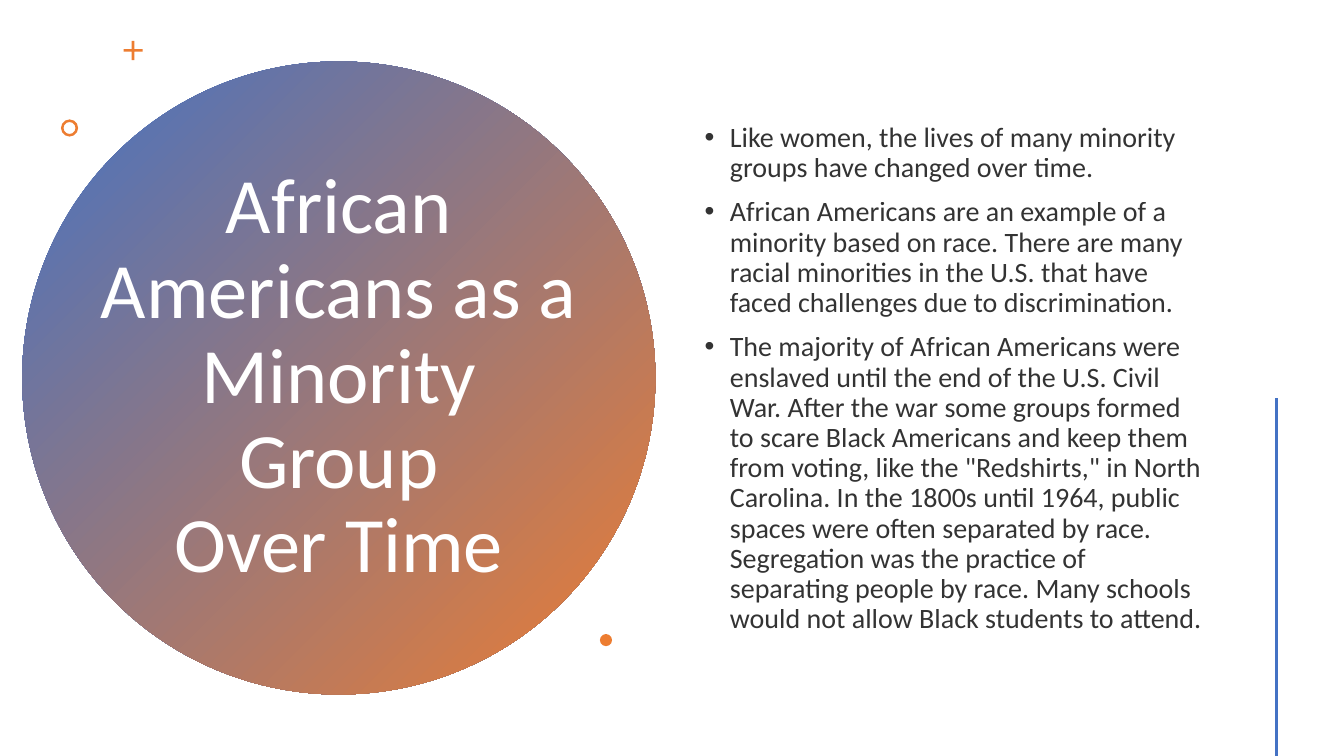
from lxml import etree
from pptx import Presentation
from pptx.dml.color import RGBColor
from pptx.enum.shapes import MSO_CONNECTOR, MSO_SHAPE
from pptx.enum.text import MSO_ANCHOR, PP_ALIGN
from pptx.oxml.ns import qn
from pptx.util import Inches, Pt

COLORS = {"blue": "4472C4", "orange": "ED7D31", "white": "FFFFFF", "black": "000000"}
FONT = "Calibri"
WIDTH, HEIGHT = 13.33, 7.5

TITLE = "African Americans as a Minority Group\vOver Time"
BULLETS = [
    "Like women, the lives of many minority groups have changed over time.",
    "African Americans are an example of a minority based on race. There are many racial "
    "minorities in the U.S. that have faced challenges due to discrimination.",
    "The majority of African Americans were enslaved until the end of the U.S. Civil War. "
    "After the war some groups formed to scare Black Americans and keep them from voting, "
    "like the \"Redshirts,\" in North Carolina. In the 1800s until 1964, public spaces were "
    "often separated by race. Segregation was the practice of separating people by race. "
    "Many schools would not allow Black students to attend.",
]

# Centre x, centre y, diameter in inches
DISC = (3.36, 3.75, 6.28)
TITLE_SIZE = (5.05, 4.67)
BODY_BOX = (6.89, 0.57, 5.22, 6.38)
# Preset, centre x, centre y, diameter, adjustment
ORNAMENTS = [
    (MSO_SHAPE.CROSS, 1.32, 0.5, 0.19, 0.43),
    (MSO_SHAPE.DONUT, 0.69, 1.27, 0.17, 0.15),
    (MSO_SHAPE.OVAL, 6.01, 6.35, 0.12, None),
]
RULE_X, RULE_TOP = 0.95 * WIDTH, 3.95


def color(name):
    return RGBColor.from_string(COLORS[name])


def add_round(slide, preset, center_x, center_y, diameter):
    """Add a borderless square-bounded shape around a centre point."""
    shape = slide.shapes.add_shape(
        preset, Inches(center_x - diameter / 2), Inches(center_y - diameter / 2),
        Inches(diameter), Inches(diameter))
    shape.shadow.inherit = False
    shape.line.fill.background()
    return shape


def add_text_frame(slide, box):
    frame = slide.shapes.add_textbox(*map(Inches, box)).text_frame
    frame.word_wrap = True
    frame.vertical_anchor = MSO_ANCHOR.MIDDLE
    return frame


def style(paragraph, size, color_name):
    paragraph.line_spacing = 0.9
    paragraph.font.name = FONT
    paragraph.font.size = Pt(size)
    paragraph.font.color.rgb = color(color_name)


def add_bullet(paragraph, indent):
    properties = paragraph._p.get_or_add_pPr()
    properties.set("marL", str(Inches(indent)))
    properties.set("indent", str(-Inches(indent)))
    etree.SubElement(properties, qn("a:buFont")).set("typeface", "Arial")
    etree.SubElement(properties, qn("a:buChar")).set("char", "•")


def set_opacity(paragraph, percent):
    for element in paragraph._p.iter(qn("a:srgbClr")):
        etree.SubElement(element, qn("a:alpha")).set("val", str(percent * 1000))


def add_disc(slide):
    disc = add_round(slide, MSO_SHAPE.OVAL, *DISC)
    disc.fill.gradient()
    disc.fill.gradient_angle = 315
    for stop, name in zip(disc.fill.gradient_stops, ("blue", "orange")):
        stop.color.rgb = color(name)


def add_title(slide):
    width, height = TITLE_SIZE
    frame = add_text_frame(
        slide, (DISC[0] - width / 2, DISC[1] - height / 2, width, height))
    paragraph = frame.paragraphs[0]
    paragraph.text = TITLE
    paragraph.alignment = PP_ALIGN.CENTER
    style(paragraph, 56, "white")


def add_body(slide):
    frame = add_text_frame(slide, BODY_BOX)
    for index, text in enumerate(BULLETS):
        paragraph = frame.add_paragraph() if index else frame.paragraphs[0]
        paragraph.text = text
        paragraph.space_before = Pt(10)
        add_bullet(paragraph, 0.25)
        style(paragraph, 20, "black")
        set_opacity(paragraph, 80)


def add_ornaments(slide):
    for preset, center_x, center_y, diameter, adjustment in ORNAMENTS:
        ornament = add_round(slide, preset, center_x, center_y, diameter)
        ornament.fill.solid()
        ornament.fill.fore_color.rgb = color("orange")
        if adjustment is not None:
            ornament.adjustments[0] = adjustment


def add_rule(slide):
    rule = slide.shapes.add_connector(
        MSO_CONNECTOR.STRAIGHT, Inches(RULE_X), Inches(RULE_TOP),
        Inches(RULE_X), Inches(HEIGHT))
    rule.line.color.rgb = color("blue")
    rule.line.width = Pt(2)
    etree.SubElement(rule._element.spPr, qn("a:effectLst"))


def main():
    presentation = Presentation()
    presentation.slide_width, presentation.slide_height = Inches(WIDTH), Inches(HEIGHT)
    slide = presentation.slides.add_slide(presentation.slide_layouts[6])
    add_disc(slide)
    add_title(slide)
    add_body(slide)
    add_ornaments(slide)
    add_rule(slide)
    presentation.save("out.pptx")


if __name__ == "__main__":
    main()
